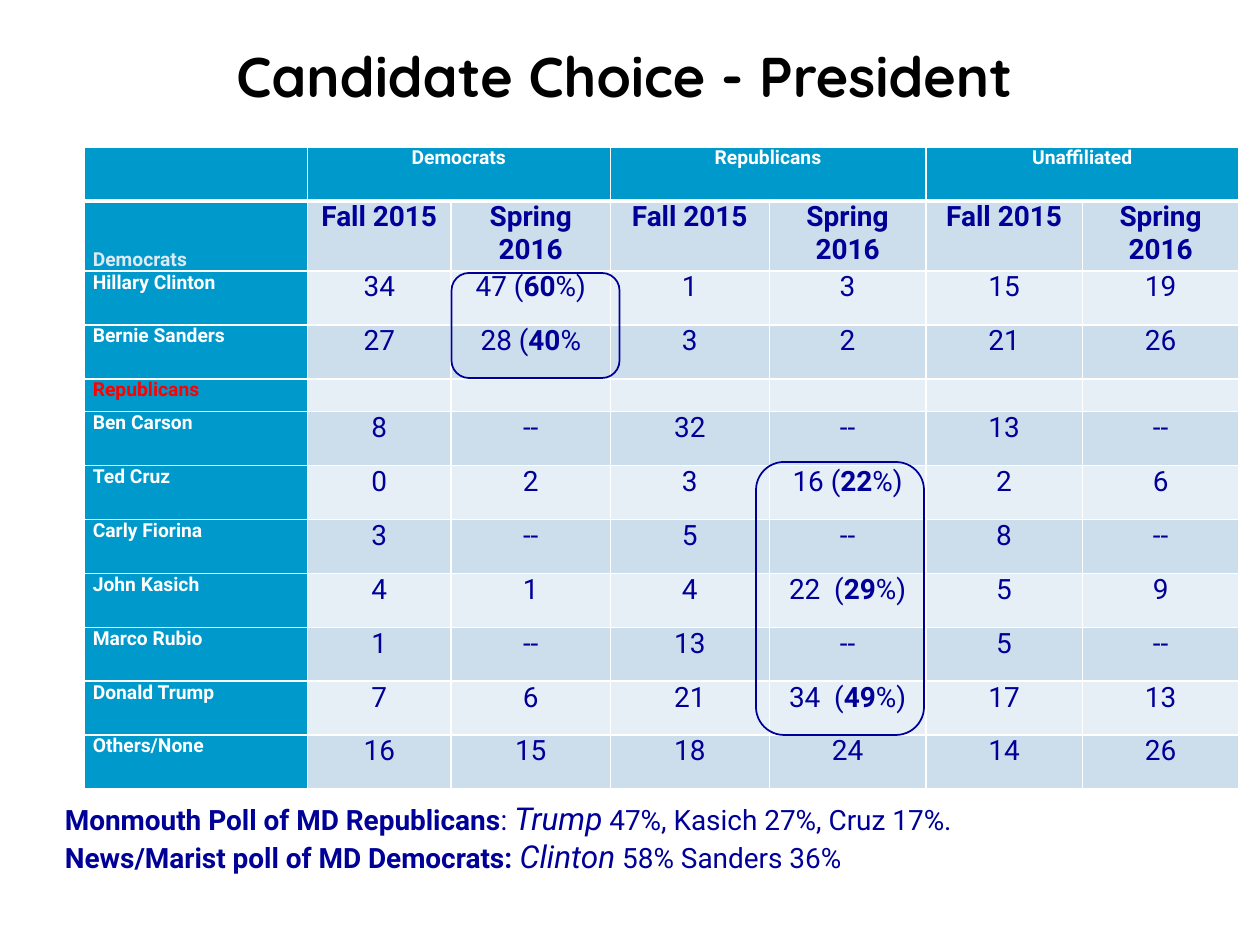
from lxml import etree
from pptx import Presentation
from pptx.dml.color import RGBColor
from pptx.enum.shapes import MSO_SHAPE
from pptx.enum.text import MSO_ANCHOR, MSO_AUTO_SIZE, PP_ALIGN
from pptx.oxml.ns import qn
from pptx.util import Inches, Pt

ROUNDED = MSO_SHAPE.ROUNDED_RECTANGLE
TOP, BOTTOM = MSO_ANCHOR.TOP, MSO_ANCHOR.BOTTOM
FIT_SHAPE, NO_FIT = MSO_AUTO_SIZE.SHAPE_TO_FIT_TEXT, MSO_AUTO_SIZE.NONE
LEFT, CENTER = PP_ALIGN.LEFT, PP_ALIGN.CENTER

GRID_COLUMNS, GRID_ROWS = 120, 90
UNIT = Inches(10) // GRID_COLUMNS
COLORS = {
    "title": "000000",
    "navy": "000099",
    "header": "0099CC",
    "white": "FFFFFF",
    "red": "FF0000",
    "pale": "DDEAF3",
    "dark_band": "CCDEEC",
    "light_band": "E7EFF6",
}
PARTIES = ["Democrats", "Republicans", "Unaffiliated"]
SEASONS = ["Fall 2015", "Spring 2016"]
COLUMN_SHARES = [1.77, 1.14, 1.26, 1.26, 1.24, 1.24, 1.24]
ROW_SHARES = [0.43, 0.56, 0.43, 0.43, 0.26] + [0.43] * 7
RESULTS = [
    ("Hillary Clinton", "34", "47 (*60*%)", "1", "3", "15", "19"),
    ("Bernie Sanders", "27", "28 (*40*%", "3", "2", "21", "26"),
    ("Republicans", "", "", "", "", "", ""),
    ("Ben Carson", "8", "--", "32", "--", "13", "--"),
    ("Ted Cruz", "0", "2", "3", "16 (*22*%)", "2", "6"),
    ("Carly Fiorina", "3", "--", "5", "--", "8", "--"),
    ("John Kasich", "4", "1", "4", "22  (*29*%)", "5", "9"),
    ("Marco Rubio", "1", "--", "13", "--", "5", "--"),
    ("Donald Trump", "7", "6", "21", "34  (*49*%)", "17", "13"),
    ("Others/None", "16", "15", "18", "24", "14", "26"),
]
POLLS = [
    ("Monmouth Poll of MD Republicans", ": ", "Trump", " 47%, Kasich 27%, Cruz 17%."),
    ("News/Marist poll of MD Democrats: ", "", "Clinton", " 58% Sanders 36%"),
]


def grid(*box):
    """Turn grid columns and rows into slide lengths."""
    return [round(length * UNIT) for length in box]


def rgb(name):
    """Look up a named colour."""
    return RGBColor.from_string(COLORS[name])


def write(paragraph, text, size=16, color="navy", font="Roboto",
          bold=False, italic=False, align=LEFT):
    """Append text to a paragraph, flipping bold at each asterisk."""
    paragraph.alignment = align
    for index, part in enumerate(text.split("*")):
        if part:
            run = paragraph.add_run()
            run.text = part
            run.font.name = font
            run.font.size = Pt(size)
            run.font.bold = bold != bool(index % 2)
            run.font.italic = italic
            run.font.color.rgb = rgb(color)


def style_cell(cell, fill, top=1, bottom=1, anchor=TOP):
    """Set the margins, borders and fill of a table cell."""
    cell.margin_left = cell.margin_right = Inches(0.07)
    cell.margin_top = cell.margin_bottom = 0
    cell.vertical_anchor = anchor
    properties = cell._tc.get_or_add_tcPr()
    for side, width in {"L": 1, "R": 1, "T": top, "B": bottom}.items():
        border = etree.SubElement(properties, qn(f"a:ln{side}"), w=str(Pt(width)))
        solid = etree.SubElement(border, qn("a:solidFill"))
        etree.SubElement(solid, qn("a:srgbClr"), val=COLORS["white"])
    cell.fill.solid()
    cell.fill.fore_color.rgb = rgb(fill)


def fill_cell(cell, text, **text_format):
    """Write a cell's text, or keep an empty cell's line small."""
    paragraph = cell.text_frame.paragraphs[0]
    if text:
        write(paragraph, text, **text_format)
    else:
        paragraph._p.get_or_add_endParaRPr().set("sz", "1100")


def add_title(slide, box):
    """Place the slide title."""
    title = slide.shapes.title
    title.left, title.top, title.width, title.height = grid(*box)
    title.text_frame.auto_size = NO_FIT
    title.text_frame.vertical_anchor = BOTTOM
    write(title.text_frame.paragraphs[0], "Candidate Choice - President",
          size=32, color="title", font="Quicksand", bold=True, align=CENTER)


def add_results(slide, box):
    """Place the table of candidate support by party and season."""
    left, top, width, height = grid(*box)
    results = slide.shapes.add_table(
        len(ROW_SHARES), len(COLUMN_SHARES), left, top, width, height).table
    results.first_row = results.horz_banding = False
    for column, share in zip(results.columns, COLUMN_SHARES):
        column.width = round(width * share / sum(COLUMN_SHARES))
    for row, share in zip(results.rows, ROW_SHARES):
        row.height = round(height * share / sum(ROW_SHARES))

    party_cells = [text for party in PARTIES for text in (party, "")]
    lines = [["", *party_cells], ["Democrats", *SEASONS * len(PARTIES)], *RESULTS]
    for row, line in enumerate(lines):
        band = "dark_band" if row % 2 else "light_band"
        for column, text in enumerate(line):
            cell = results.cell(row, column)
            is_label = row == 0 or column == 0
            style_cell(cell, "header" if is_label else band,
                       top=3 if row == 1 else 1, bottom=3 if row == 0 else 1,
                       anchor=BOTTOM if (row, column) == (1, 0) else TOP)
            label_color = {(1, 0): "pale", (4, 0): "red"}.get((row, column), "white")
            fill_cell(cell, text,
                      size=11 if is_label else 16,
                      color=label_color if is_label else "navy",
                      bold=is_label or row == 1,
                      align=CENTER if column else LEFT)
    for column in range(1, len(COLUMN_SHARES), len(SEASONS)):
        results.cell(0, column).merge(results.cell(0, column + 1))


def add_polls(slide, box):
    """Place the comparison with outside polls."""
    frame = slide.shapes.add_textbox(*grid(*box)).text_frame
    frame.word_wrap = True
    frame.auto_size = FIT_SHAPE
    for index, (source, separator, leader, others) in enumerate(POLLS):
        paragraph = frame.add_paragraph() if index else frame.paragraphs[0]
        write(paragraph, source, bold=True)
        write(paragraph, separator)
        write(paragraph, leader, size=18, italic=True)
        write(paragraph, others)


def add_highlight(slide, box):
    """Outline a group of results."""
    highlight = slide.shapes.add_shape(ROUNDED, *grid(*box))
    highlight.shadow.inherit = False
    highlight.fill.background()
    highlight.line.color.rgb = rgb("navy")
    highlight.line.width = Pt(1)


def main():
    """Build and save the slide."""
    deck = Presentation()
    deck.slide_width, deck.slide_height = grid(GRID_COLUMNS, GRID_ROWS)
    slide = deck.slides.add_slide(deck.slide_layouts[5])
    add_title(slide, (7, 5, 105, 6))
    add_results(slide, (8, 14, 110, 61.2))
    add_polls(slide, (5, 75.5, 111, 8.5))
    for box in [(43, 26, 16, 10), (72, 44, 16, 26)]:
        add_highlight(slide, box)
    deck.save("out.pptx")


if __name__ == "__main__":
    main()
